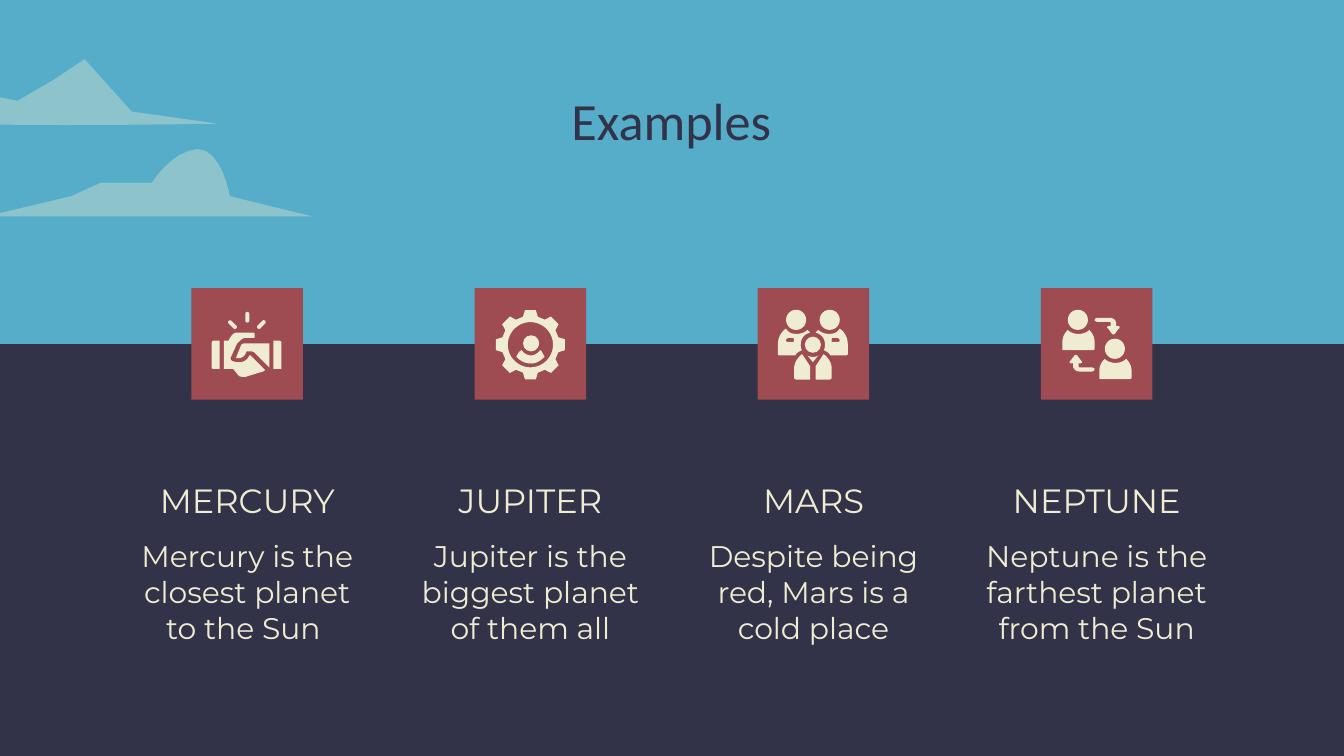
from math import cos, radians, sin
from typing import NamedTuple

from lxml.etree import SubElement
from pptx import Presentation
from pptx.dml.color import RGBColor
from pptx.enum.shapes import MSO_SHAPE as Preset
from pptx.enum.text import MSO_ANCHOR as Anchor, MSO_AUTO_SIZE as AutoSize, PP_ALIGN as Align
from pptx.oxml.ns import qn
from pptx.util import Inches, Pt

Contour = list[tuple[float, float]]

class Theme(NamedTuple):
    sky: str = "55ADC9"
    ground: str = "323249"
    cream: str = "EFECD2"
    tile: str = "9E4B51"
    title_font: str = "Calibri"
    body_font: str = "Montserrat"
    title_size: int = 28
    heading_size: int = 18
    body_size: int = 16
    cloud_opacity: float = 0.37

class Box(NamedTuple):
    left: float
    top: float
    width: float
    height: float

class Icon(NamedTuple):
    """Parts of an icon, in hundredths of an inch from the corner of its tile."""
    outlines: tuple[list[Contour], ...]
    discs: tuple[tuple[float, float, float], ...] = ()  # left, top, diameter
    bars: tuple[tuple[float, float, float], ...] = ()  # centre x, centre y, rotation

class Planet(NamedTuple):
    name: str
    text: str
    icon: Icon

THEME = Theme()
WIDTH = 10
HEIGHT = WIDTH * 9 / 16
MARGIN, COLUMN, COLUMNS = 0.9, 1.88, 4
PITCH = (WIDTH - 2 * MARGIN - COLUMN) / (COLUMNS - 1)
TILE, HORIZON = 0.83, 2.56
NUMBERS_NEEDED = {"M": 2, "L": 2, "C": 6}

def trace(drawing: str, steps: int = 8) -> list[Contour]:
    """Turn M, L and C commands into closed contours, with curves sampled."""
    contours, command, numbers = [], "M", []
    for token in drawing.split():
        if token[0] in NUMBERS_NEEDED:
            command, token = token[0], token[1:]
        numbers.append(float(token))
        if len(numbers) < NUMBERS_NEEDED[command]:
            continue
        points, numbers = list(zip(numbers[::2], numbers[1::2])), []
        if command == "M":
            contours.append(points)
        elif command == "L":
            contours[-1] += points
        else:
            curve = [contours[-1][-1], *points]
            for t in (step / steps for step in range(1, steps + 1)):
                weights = ((1 - t) ** 3, 3 * t * (1 - t) ** 2, 3 * t * t * (1 - t), t ** 3)
                contours[-1].append(tuple(sum(w * p[axis] for w, p in zip(weights, curve)) for axis in (0, 1)))
    return contours

def moved(contours: list[Contour], dx: float, dy: float, flip_x: int = 1, flip_y: int = 1) -> list[Contour]:
    return [[(flip_x * x + dx, flip_y * y + dy) for x, y in contour] for contour in contours]

def gear(cx: float, cy: float, teeth: int = 8) -> list[Contour]:
    tooth = ((21.5, -15), (26, -9), (26, 9), (21.5, 15))
    rim = [(r, 360 * k / teeth + angle) for k in range(teeth) for r, angle in tooth]
    hole = [(16.8, -angle) for angle in range(0, 360, 6)]
    return [[(cx + r * cos(radians(a)), cy + r * sin(radians(a))) for r, a in ring] for ring in (rim, hole)]

PERSON = trace("M20 31 C18 33 16 36 16 40 L16 45 C16 46 16 46 17 46 L39 46 C39 46 40 46 40 45 L40 40 "
               "C40 36 38 33 36 31 C34 33 31 34 28 34 C25 34 22 33 20 31")
ARROW = trace("M42 22 C41 22 40 23 40 24 C40 24 41 25 42 25 L51 25 C52 25 52 26 52 26 L52 29 C52 28 51 28 51 28 "
              "C49 28 49 30 50 30 L53 34 C53 34.5 55 34.5 55 34 L58 30 C59 30 59 28 57 28 C57 28 56 28 56 29 "
              "L56 26 C56 24 54 22 51 22")
TORSO = trace("M49 49 L43 58 43 68 53 68 C54 68 55 67 55 67 L55 60 C55 56 53 52 49 49")
PARENT = trace("M59 37 C60 37 61 38 61 39 C61 40 60 40 59 40 L56 40 C55 40 55 40 55 39 C55 38 55 37 56 37 "
               "M61 30 C59 33 57 34 53 34 C50 34 47 33 45 31 C45 31 44 32 43 33 C47 34 50 37 50 42 "
               "C50 43 50 45 49 46 C51 47 53 48 54 50 L66 50 C67 50 67 49 67 48 L67 42 C67 37 65 33 61 30")

HANDSHAKE = Icon(
    outlines=(
        trace("M61 39 L61 60 66 60 C67 60 67 60 67 59 L67 40 C67 40 66 39 66 39"),
        trace("M16 39 C16 39 15 40 15 41 L15 59 C15 60 16 60 17 60 L21 60 21 39"),
        trace("M40 41 C39 41 38 41 37 42 L33 52 C33 52 34 52 35 52 C37 52 39 51 40 49 L41 47 44 47 "
              "C45 47 46 47 47 48 L58 59 58 41"),
        trace("M34 33 C32 33 31 34 30 35 L28 38 C28 39 27 39 27 39 L24 39 24 60 31 60 35 65 C36 66 38 66 40 66 "
              "L53 62 C54 62 54 61 55 61 L44 50 43 50 C42 53 39 55 36 55 C35 55 32 55 30 54 C29 53 29 52 29 52 "
              "L34 41 C36 39 38 37 40 37 L47 37 C47 37 47 36 47 34 C47 34 47 33 46 33")),
    bars=((41.5, 21.5, 0), (30.5, 27, -45), (52, 27, 45)))
GEAR = Icon(
    outlines=(gear(41.5, 42), trace("M35 46 C33 47 32 49 31 51 C34 54 37 56 42 56 C46 56 49 54 52 51 "
                                    "C51 49 50 47 49 46 C47 48 45 50 42 50 C39 50 36 48 35 46")),
    discs=((36, 35, 12),))
FAMILY = Icon(
    outlines=(trace("M37 50 L41 55 45 50 C44 51 42 51 41 51 C40 51 38 51 37 50"),
              TORSO, moved(TORSO, 82, 0, -1), PARENT, moved(PARENT, 82, 0, -1)),
    discs=((35, 36, 12), (21, 16, 15), (46, 16, 15)))
EXCHANGE = Icon(
    outlines=(PERSON, moved(PERSON, 27.5, 21.5), ARROW, moved(ARROW, 80, 84, -1, -1)),
    discs=((20, 16, 15), (47.5, 37.5, 15)))
PLANETS = (
    Planet("MERCURY", "Mercury is the closest planet to the Sun ", HANDSHAKE),
    Planet("JUPITER", "Jupiter is the biggest planet of them all", GEAR),
    Planet("MARS", "Despite being red, Mars is a cold place", FAMILY),
    Planet("NEPTUNE", "Neptune is the farthest planet from the Sun", EXCHANGE))
CLOUDS = (
    trace("M147 111 C128 112 113 136 113 136 L75 136 53 146 -10 161 232 161 171 146 C171 146 165 111 147 111"),
    trace("M63 44 L39 60 13 75 -7 71 C-7 71 -8 67 -12 67 C-14 67 -17 68 -22 72 L-43 87 C-43 87 -46 82 -52 82 "
          "C-55 82 -58 83 -62 87 C-69 92 -9 93 50 93 C106 93 162 92 162 92 L98 83"))

def paint(shape, color: str) -> None:
    shape.shadow.inherit = False
    shape.fill.solid()
    shape.fill.fore_color.rgb = RGBColor.from_string(color)
    shape.line.fill.background()

def add_preset(shapes, preset: Preset, box: Box, color: str):
    shape = shapes.add_shape(preset, *map(Inches, box))
    paint(shape, color)
    return shape

def add_outline(shapes, contours: list[Contour], color: str, left: float = 0, top: float = 0):
    first, *others = [[(Inches(left + x / 100), Inches(top + y / 100)) for x, y in contour] for contour in contours]
    builder = shapes.build_freeform(*first[0], scale=1.0)
    builder.add_line_segments(first[1:], close=True)
    for start, *rest in others:
        builder.move_to(*start)
        builder.add_line_segments(rest, close=True)
    shape = builder.convert_to_shape()
    paint(shape, color)
    return shape

def write(shape, box: Box, text: str, font: str, size: int, color: str, anchor: Anchor) -> None:
    for name, value in zip(box._fields, box):
        setattr(shape, name, Inches(value))
    frame = shape.text_frame
    frame.text = text
    margins = {f"margin_{side}": Inches(0.1) for side in ("left", "top", "right", "bottom")}
    layout = {"word_wrap": True, "auto_size": AutoSize.NONE, "vertical_anchor": anchor}
    for name, value in (margins | layout).items():
        setattr(frame, name, value)
    paragraph = frame.paragraphs[0]
    paragraph.alignment = Align.CENTER
    for name, value in {"name": font, "size": Pt(size), "bold": False}.items():
        setattr(paragraph.runs[0].font, name, value)
    paragraph.runs[0].font.color.rgb = RGBColor.from_string(color)

def add_icon(slide, icon: Icon, left: float, top: float) -> None:
    shapes = slide.shapes.add_group_shape().shapes
    for contours in icon.outlines:
        add_outline(shapes, contours, THEME.cream, left, top)
    for x, y, size in icon.discs:
        add_preset(shapes, Preset.OVAL, Box(left + x / 100, top + y / 100, size / 100, size / 100), THEME.cream)
    for x, y, rotation in icon.bars:
        box = Box(left + x / 100 - 0.015, top + y / 100 - 0.04, 0.03, 0.08)
        bar = add_preset(shapes, Preset.ROUNDED_RECTANGLE, box, THEME.cream)
        bar.adjustments[0] = 0.5
        bar.rotation = rotation

def add_planet(slide, planet: Planet, column: int) -> None:
    left = MARGIN + column * PITCH
    for text, size, anchor, top, height in ((planet.name, THEME.heading_size, Anchor.BOTTOM, 3.56, 0.41),
                                            (planet.text, THEME.body_size, Anchor.TOP, 3.9, 0.99)):
        box = Box(left, top, COLUMN, height)
        write(slide.shapes.add_textbox(*map(Inches, box)), box, text, THEME.body_font, size, THEME.cream, anchor)
    tile = Box(left + (COLUMN - TILE) / 2, HORIZON - TILE / 2, TILE, TILE)
    add_preset(slide.shapes, Preset.RECTANGLE, tile, THEME.tile)
    add_icon(slide, planet.icon, tile.left, tile.top)

def main() -> None:
    presentation = Presentation()
    presentation.slide_width, presentation.slide_height = Inches(WIDTH), Inches(HEIGHT)
    slide = presentation.slides.add_slide(presentation.slide_layouts[5])
    slide.background.fill.solid()
    slide.background.fill.fore_color.rgb = RGBColor.from_string(THEME.sky)
    for contours in CLOUDS:
        cloud = add_outline(slide.shapes, contours, THEME.cream)
        color = cloud.element.spPr.find(qn("a:solidFill"))[0]
        SubElement(color, qn("a:alpha"), val=str(round(THEME.cloud_opacity * 100000)))
    add_preset(slide.shapes, Preset.RECTANGLE, Box(-0.04, HORIZON, 10.21, 3.15), THEME.ground)
    write(slide.shapes.title, Box(1.23, 0.59, 7.53, 0.63), "Examples", THEME.title_font,
          THEME.title_size, THEME.ground, Anchor.BOTTOM)
    for column, planet in enumerate(PLANETS):
        add_planet(slide, planet, column)
    presentation.save("out.pptx")

if __name__ == "__main__":
    main()
